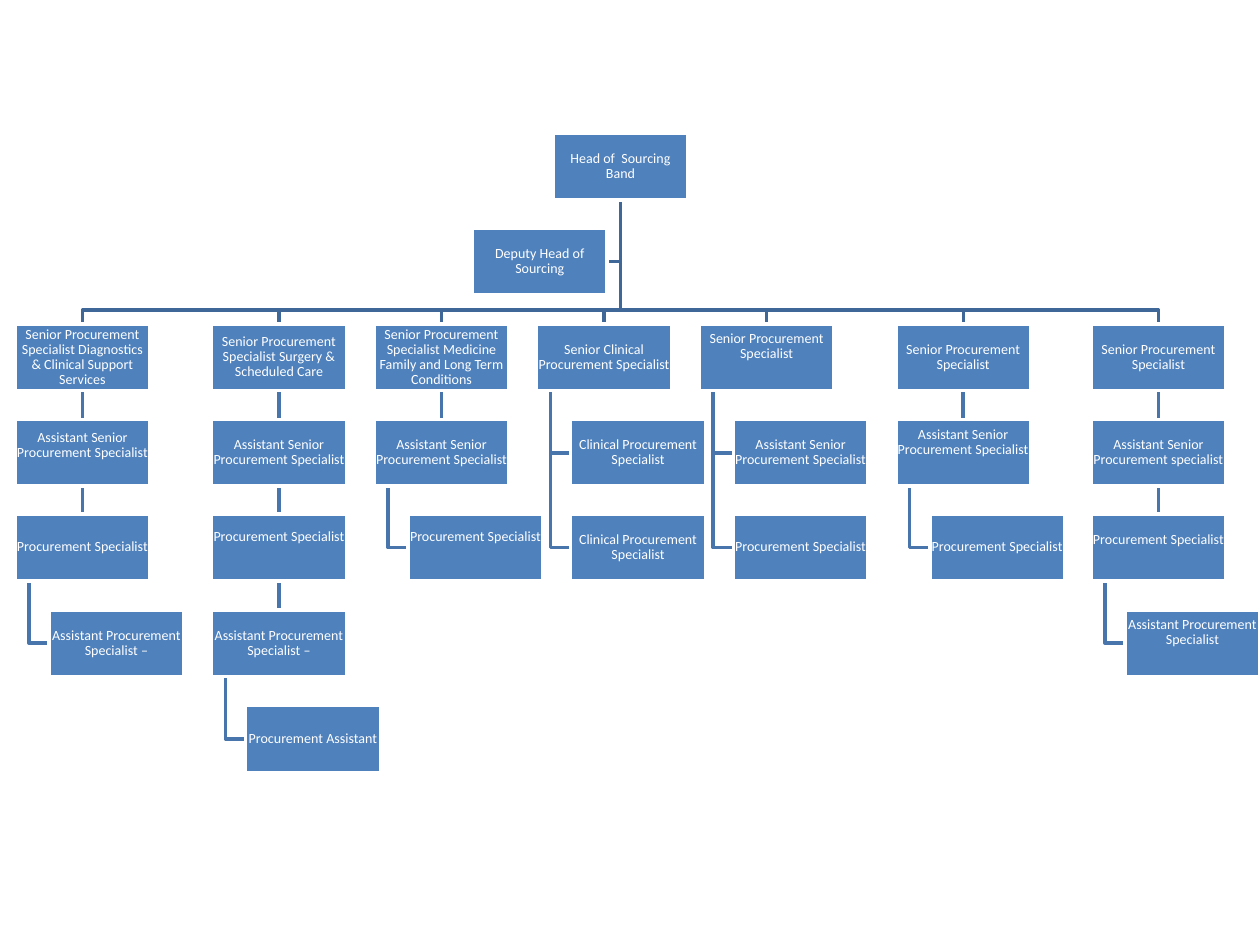
from lxml import etree
from pptx import Presentation
from pptx.dml.color import RGBColor
from pptx.enum.shapes import MSO_CONNECTOR, MSO_SHAPE
from pptx.enum.text import MSO_ANCHOR, PP_ALIGN
from pptx.oxml.ns import qn
from pptx.util import Inches, Pt

RECT = MSO_SHAPE.RECTANGLE
STRAIGHT = MSO_CONNECTOR.STRAIGHT
MIDDLE = MSO_ANCHOR.MIDDLE
CENTER = PP_ALIGN.CENTER

WHITE = RGBColor(0xFF, 0xFF, 0xFF)
BLUE = RGBColor(0x4F, 0x81, 0xBD)
TOP_LINE = RGBColor(0x3F, 0x67, 0x97)
SUB_LINE = RGBColor(0x48, 0x75, 0xAC)

BOX_W, BOX_H = 1.07, 0.53
ROWS = (1.06, 1.81, 2.57, 3.33, 4.08, 4.84, 5.6)
FIRST = 2      # row of the column heads
INDENT = 0.27  # shift of a hanging box
STEM = 0.11    # shift of the line it hangs from
BUS = 2.46     # height of the bar above the columns
HEAD, DEPUTY = 4.39, 3.75

SENIOR = "Senior Procurement Specialist"
ASSIST = "Assistant Senior Procurement Specialist"
PLAIN = "Procurement Specialist"
CLINIC = "Clinical Procurement Specialist"
JUNIOR = "Assistant Procurement Specialist"

# Text sits higher in some boxes: (column, row) -> extra bottom inset
LIFT = {(0, 3): 0.12, (1, 4): 0.17, (2, 4): 0.17, (4, 2): 0.17,
        (5, 3): 0.17, (6, 4): 0.12, (6, 5): 0.17}

# left edge, boxes stacked in line, boxes hanging from the last of them
COLUMNS = [
    (0.12, [SENIOR + " Diagnostics & Clinical Support Services", ASSIST, PLAIN],
     [JUNIOR + " –"]),
    (1.68, [SENIOR + " Surgery & Scheduled Care", ASSIST, PLAIN, JUNIOR + " –"],
     ["Procurement Assistant"]),
    (2.97, [SENIOR + " Medicine Family and Long Term Conditions", ASSIST],
     [PLAIN]),
    (4.26, ["Senior Clinical Procurement Specialist"], [CLINIC, CLINIC]),
    (5.55, [SENIOR], [ASSIST, PLAIN]),
    (7.11, [SENIOR, ASSIST], [PLAIN]),
    (8.66, [SENIOR, "Assistant Senior Procurement specialist", PLAIN], [JUNIOR]),
]


class Chart:
    """Draws the boxes and lines of an organisation chart on one slide."""

    font, size, width = "Calibri", Pt(8), Pt(2)

    def __init__(self, slide):
        self.shapes = slide.shapes

    def box(self, left, top, text, lift=0):
        shape = self.shapes.add_shape(
            RECT, Inches(left), Inches(top), Inches(BOX_W), Inches(BOX_H))
        shape.shadow.inherit = False
        shape.fill.solid()
        shape.fill.fore_color.rgb = BLUE
        self.style(shape.line, WHITE)
        frame = shape.text_frame
        frame.word_wrap = True
        frame.vertical_anchor = MIDDLE
        frame.margin_left = frame.margin_right = frame.margin_top = Inches(0.01)
        frame.margin_bottom = Inches(0.01 + lift)
        frame.text = text
        para = frame.paragraphs[0]
        para.alignment = CENTER
        para.line_spacing = 0.9
        font = para.runs[0].font
        font.name, font.size, font.color.rgb = self.font, self.size, WHITE

    def line(self, x, top, end):
        """Straight line down between two stacked boxes."""
        link = self.shapes.add_connector(
            STRAIGHT, Inches(x), Inches(top), Inches(x), Inches(end))
        etree.SubElement(link._element.spPr, qn("a:effectLst"))
        self.style(link.line, SUB_LINE)

    def elbow(self, points, color):
        start, *rest = [(Inches(x), Inches(y)) for x, y in points]
        path = self.shapes.build_freeform(*start)
        path.add_line_segments(rest, close=False)
        shape = path.convert_to_shape()
        shape.shadow.inherit = False
        shape.fill.background()
        self.style(shape.line, color)

    def style(self, line, color):
        line.color.rgb = color
        line.width = self.width


def draw_lines(chart):
    mid = HEAD + BOX_W / 2
    foot = ROWS[0] + BOX_H
    side = ROWS[1] + BOX_H / 2
    chart.elbow([(mid, foot), (mid, side), (DEPUTY + BOX_W, side)], TOP_LINE)
    for left, stack, hung in COLUMNS:
        x = left + BOX_W / 2
        chart.elbow([(mid, foot), (mid, BUS), (x, BUS), (x, ROWS[FIRST])],
                    TOP_LINE)
        last = FIRST + len(stack) - 1
        for row in range(FIRST, last):
            chart.line(x, ROWS[row] + BOX_H, ROWS[row + 1])
        stem = left + STEM
        for row in range(last + 1, last + 1 + len(hung)):
            y = ROWS[row] + BOX_H / 2
            chart.elbow([(stem, ROWS[last] + BOX_H), (stem, y),
                         (left + INDENT, y)], SUB_LINE)


def draw_boxes(chart):
    chart.box(HEAD, ROWS[0], "Head of  Sourcing Band")
    chart.box(DEPUTY, ROWS[1], "Deputy Head of Sourcing")
    for col, (left, stack, hung) in enumerate(COLUMNS):
        for row, text in enumerate(stack + hung, FIRST):
            shift = INDENT if row >= FIRST + len(stack) else 0
            chart.box(left + shift, ROWS[row], text, LIFT.get((col, row), 0))


def main():
    deck = Presentation()
    deck.slide_width, deck.slide_height = Inches(10), Inches(7.5)
    chart = Chart(deck.slides.add_slide(deck.slide_layouts[6]))
    draw_lines(chart)
    draw_boxes(chart)
    deck.save("out.pptx")


if __name__ == "__main__":
    main()
